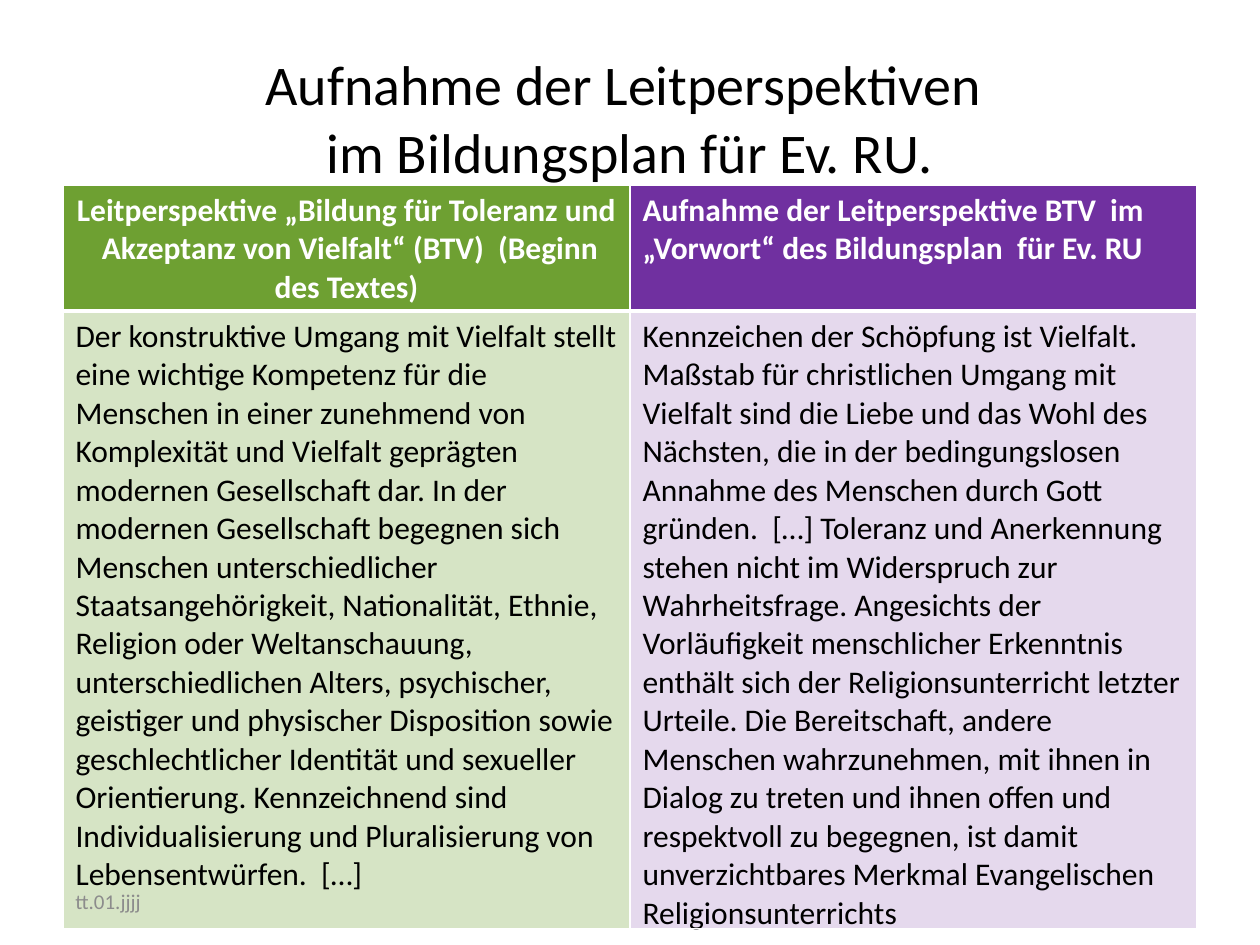
"""Build the slide that compares a guiding perspective with the curriculum."""
from dataclasses import dataclass

from lxml.etree import SubElement
from pptx import Presentation
from pptx.dml.color import RGBColor
from pptx.enum.text import MSO_ANCHOR as Anchor, PP_ALIGN as Align
from pptx.oxml.ns import qn
from pptx.util import Emu, Pt

TITLE = "Aufnahme der Leitperspektiven \vim Bildungsplan für Ev. RU."
FOOTER = "tt.01.jjjj"
HEADERS = (
    "Leitperspektive „Bildung für Toleranz und  Akzeptanz von Vielfalt“ (BTV)  "
    "(Beginn des Textes)",
    "Aufnahme der Leitperspektive BTV  im „Vorwort“ des Bildungsplan  für Ev. RU",
)
BODIES = (
    "Der konstruktive Umgang mit Vielfalt stellt eine wichtige Kompetenz für die "
    "Menschen in einer zunehmend von Komplexität und Vielfalt geprägten modernen "
    "Gesellschaft dar. In der modernen Gesellschaft begegnen sich Menschen "
    "unterschiedlicher Staatsangehörigkeit, Nationalität, Ethnie, Religion oder "
    "Weltanschauung, unterschiedlichen Alters, psychischer, geistiger und physischer "
    "Disposition sowie geschlechtlicher Identität und sexueller Orientierung. "
    "Kennzeichnend sind Individualisierung und Pluralisierung von "
    "Lebensentwürfen.  […]",
    "Kennzeichen der Schöpfung ist Vielfalt. Maßstab für christlichen Umgang mit "
    "Vielfalt sind die Liebe und das Wohl des Nächsten, die in der bedingungslosen "
    "Annahme des Menschen durch Gott gründen.  […] Toleranz und Anerkennung stehen "
    "nicht im Widerspruch zur Wahrheitsfrage. Angesichts der Vorläufigkeit "
    "menschlicher Erkenntnis enthält sich der Religionsunterricht letzter Urteile. "
    "Die Bereitschaft, andere Menschen wahrzunehmen, mit ihnen in Dialog zu treten "
    "und ihnen offen und respektvoll zu begegnen, ist damit unverzichtbares Merkmal "
    "Evangelischen Religionsunterrichts",
)


@dataclass(frozen=True)
class Theme:
    font: str = "Calibri"
    title_size: int = 32
    table_size: int = 18
    footer_size: int = 12
    text: str = "000000"
    light: str = "FFFFFF"
    muted: str = "8C8C8C"
    fills: tuple = ("6EA032", "7030A0")
    opacities: tuple = (28, 18)
    thin: int = 1
    thick: int = 3


def px(length):
    return Emu(round(length * 914400 / 126))


class SlideBuilder:
    def __init__(self, theme, page):
        self.theme = theme
        self.page = page

    def style(self, frame, size, color, align=Align.LEFT, bold=False):
        for para in frame.paragraphs:
            para.alignment = align
            for span in para.runs:
                span.font.name = self.theme.font
                span.font.size = Pt(size)
                span.font.bold = bold
                span.font.color.rgb = RGBColor.from_string(color)

    def text(self, bounds, text, size, color, align=Align.LEFT):
        box = self.page.shapes.add_textbox(*map(px, bounds))
        frame = box.text_frame
        frame.word_wrap = True
        frame.vertical_anchor = Anchor.MIDDLE
        para = frame.paragraphs[0]
        para.text = text
        self.style(frame, size, color, align)

    def cell(self, cell, text, color, fill, opacity, borders, align, bold):
        cell.text_frame.paragraphs[0].text = text
        self.style(cell.text_frame, self.theme.table_size, color, align, bold)
        properties = cell._tc.get_or_add_tcPr()
        for side, width in borders.items():
            line = SubElement(properties, qn(f"a:ln{side}"), w=str(Pt(width)))
            paint = SubElement(line, qn("a:solidFill"))
            SubElement(paint, qn("a:srgbClr"), val=self.theme.light)
        cell.fill.solid()
        cell.fill.fore_color.rgb = RGBColor.from_string(fill)
        if opacity < 100:
            tint = properties.find(qn("a:solidFill")).find(qn("a:srgbClr"))
            SubElement(tint, qn("a:alpha"), val=str(opacity * 1000))

    def table(self, bounds, row_height, headers, bodies):
        theme = self.theme
        holder = self.page.shapes.add_table(2, len(headers), *map(px, bounds))
        table = holder.table
        table.horz_banding = False
        for row in table.rows:
            row.height = px(row_height)
        holder.height = px(bounds[3])
        edges = dict.fromkeys("LRTB", theme.thin)
        head_edges = {**edges, "B": theme.thick}
        body_edges = {**edges, "T": theme.thick}
        aligns = (Align.CENTER, Align.LEFT)
        columns = zip(headers, bodies, theme.fills, theme.opacities, aligns)
        for column, (header, body, fill, opacity, align) in enumerate(columns):
            self.cell(table.cell(0, column), header, theme.light, fill, 100,
                      head_edges, align, True)
            self.cell(table.cell(1, column), body, theme.text, fill, opacity,
                      body_edges, Align.LEFT, False)


def main():
    deck = Presentation()
    deck.slide_width, deck.slide_height = px(1260), px(945)
    theme = Theme()
    builder = SlideBuilder(theme, deck.slides.add_slide(deck.slide_layouts[6]))
    builder.text((63, 38, 1134, 158), TITLE, theme.title_size, theme.text, Align.CENTER)
    builder.table((63, 185, 1134, 743), 52, HEADERS, BODIES)
    builder.text((63, 876, 294, 50), FOOTER, theme.footer_size, theme.muted)
    deck.save("out.pptx")


if __name__ == "__main__":
    main()
